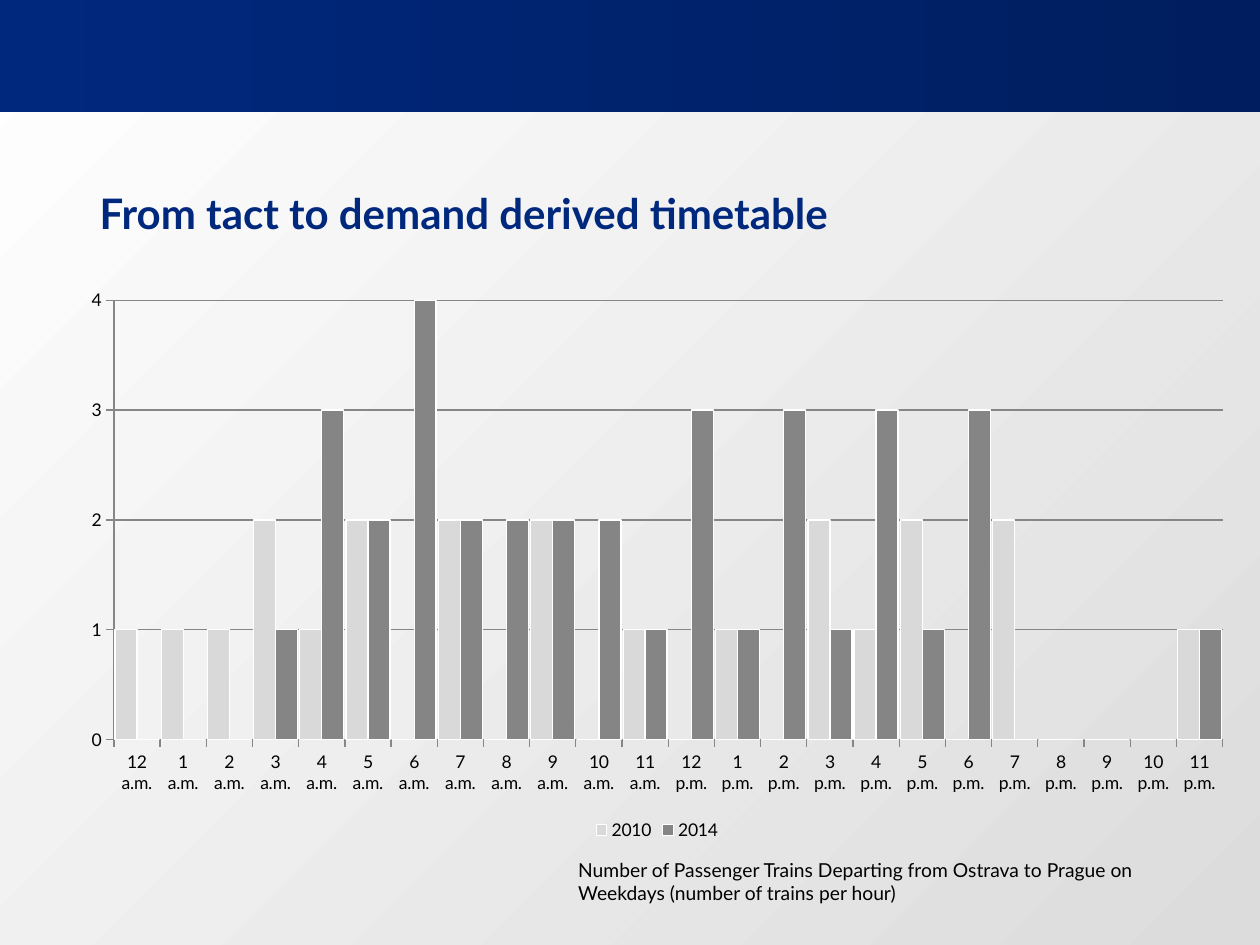
"""Build the slide comparing hourly train departures in 2010 and 2014."""
from pptx import Presentation
from pptx.chart.data import CategoryChartData
from pptx.dml.color import RGBColor
from pptx.enum.chart import XL_CHART_TYPE, XL_LEGEND_POSITION, XL_TICK_MARK
from pptx.enum.shapes import MSO_SHAPE
from pptx.enum.text import MSO_ANCHOR, PP_ALIGN
from pptx.util import Inches, Pt

COLUMNS = XL_CHART_TYPE.COLUMN_CLUSTERED
BOTTOM = XL_LEGEND_POSITION.BOTTOM
OUTSIDE = XL_TICK_MARK.OUTSIDE
NO_TICK = XL_TICK_MARK.NONE
FONT = "Lato"
NAVY, BLACK, WHITE, AXIS_GREY = "00287D", "000000", "FFFFFF", "868686"

TITLE = "From tact to demand derived timetable"
CAPTION = ("Number of Passenger Trains Departing from Ostrava to Prague on "
           "Weekdays (number of trains per hour)")
HOURS = [f"{hour} {half}" for half in ("a.m.", "p.m.") for hour in (12, *range(1, 12))]
DEPARTURES = [
    ("2010", "D9D9D9", [1, 1, 1, 2, 1, 2, 0, 2, 0, 2, 0, 1,
                        0, 1, 0, 2, 1, 2, 0, 2, 0, 0, 0, 1]),
    ("2014", "858585", [0, 0, 0, 1, 3, 2, 4, 2, 2, 2, 2, 1,
                        3, 1, 3, 1, 3, 1, 3, 0, 0, 0, 0, 1]),
]


def rgb(value):
    return RGBColor.from_string(value)


def box(*lengths):
    return [Inches(length) for length in lengths]


def style_font(font, size, color, bold=False):
    font.name, font.size, font.bold = FONT, Pt(size), bold
    font.color.rgb = rgb(color)


def style_line(line, color, width=0.75):
    line.color.rgb = rgb(color)
    line.width = Pt(width)


def set_gradient(fill, colors, angle):
    fill.gradient()
    fill.gradient_angle = angle
    for stop, color, position in zip(fill.gradient_stops, colors, (0, 1)):
        stop.color.rgb = rgb(color)
        stop.position = position


def set_text(shape, text, size, color, bold=False):
    frame = shape.text_frame
    frame.word_wrap = True
    run = frame.paragraphs[0].add_run()
    run.text = text
    style_font(run.font, size, color, bold)
    return frame


def add_backdrop(slide):
    set_gradient(slide.background.fill, (WHITE, "DCDCDC"), 315)
    banner = slide.shapes.add_shape(MSO_SHAPE.RECTANGLE, *box(0, 0, 10, 0.89))
    banner.shadow.inherit = False
    banner.line.fill.background()
    set_gradient(banner.fill, (NAVY, "001E5F"), 0)


def add_title(slide):
    title = slide.shapes.title
    title.left, title.top, title.width, title.height = box(0.79, 1.23, 8.56, 0.71)
    frame = set_text(title, TITLE, 24, NAVY, True)
    frame.margin_left = frame.margin_right = 0
    frame.vertical_anchor = MSO_ANCHOR.BOTTOM
    frame.paragraphs[0].alignment = PP_ALIGN.LEFT


def add_departures_chart(slide):
    data = CategoryChartData()
    data.categories = HOURS
    for year, _, trains in DEPARTURES:
        data.add_series(year, trains)
    chart = slide.shapes.add_chart(COLUMNS, *box(0.54, 2.21, 9.35, 4.5), data).chart
    style_font(chart.font, 10, BLACK)
    chart.has_title = False
    chart.has_legend = True
    chart.legend.position = BOTTOM
    chart.legend.include_in_layout = False

    plot = chart.plots[0]
    plot.gap_width, plot.overlap = 10, 0
    plot.vary_by_categories = False
    for series, (_, color, _) in zip(plot.series, DEPARTURES):
        series.format.fill.solid()
        series.format.fill.fore_color.rgb = rgb(color)
        style_line(series.format.line, WHITE)

    for axis in (chart.category_axis, chart.value_axis):
        axis.major_tick_mark, axis.minor_tick_mark = OUTSIDE, NO_TICK
        style_line(axis.format.line, AXIS_GREY)
    counts = chart.value_axis
    counts.minimum_scale, counts.maximum_scale, counts.major_unit = 0, 4, 1
    counts.has_major_gridlines = True
    style_line(counts.major_gridlines.format.line, AXIS_GREY)


def main():
    deck = Presentation()
    deck.slide_width, deck.slide_height = box(10, 7.5)
    slide = deck.slides.add_slide(deck.slide_layouts[5])
    add_backdrop(slide)
    add_title(slide)
    add_departures_chart(slide)
    caption = slide.shapes.add_textbox(*box(4.49, 6.76, 5, 0.47))
    set_text(caption, CAPTION, 11, BLACK)
    deck.save("out.pptx")


if __name__ == "__main__":
    main()
